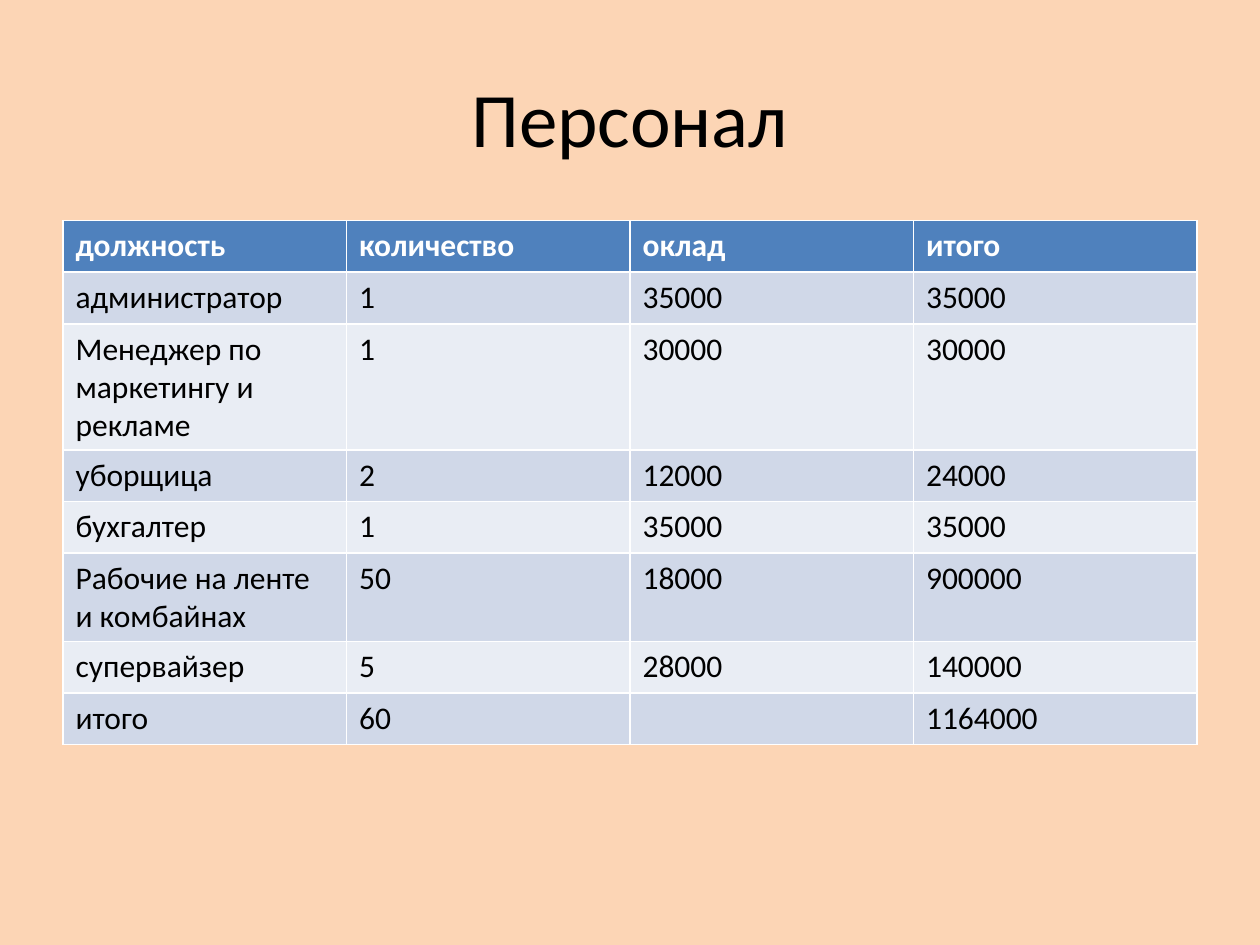
from pptx import Presentation
from pptx import util as u
from pptx.dml import color
from pptx.enum import text

FONT = "Calibri"
WIDTH, HEIGHT = u.Inches(10), u.Inches(7.5)
MARGIN = 0.05  # share of the slide's width
ROW_HEIGHT = u.Inches(0.41)

STAFF = [
    ("должность", "количество", "оклад", "итого"),
    ("администратор", "1", "35000", "35000"),
    ("Менеджер по маркетингу и рекламе", "1", "30000", "30000"),
    ("уборщица", "2", "12000", "24000"),
    ("бухгалтер", "1", "35000", "35000"),
    ("Рабочие на ленте и комбайнах", "50", "18000", "900000"),
    ("супервайзер", "5", "28000", "140000"),
    ("итого", "60", "", "1164000"),
]
HEADER_FILL = "4F81BD"
BAND_FILLS = ("E9EDF4", "D0D8E8")


def paint(fill, shade):
    fill.solid()
    fill.fore_color.rgb = color.RGBColor.from_string(shade)


def write(frame, wording, size, shade, bold=False):
    frame.text = wording
    for span in frame.paragraphs[0].runs:
        span.font.name = FONT
        span.font.size = u.Pt(size)
        span.font.bold = bold
        span.font.color.rgb = color.RGBColor.from_string(shade)


def add_title(page, left, top, width, height, wording):
    box = page.shapes.add_textbox(left, top, width, height)
    frame = box.text_frame
    frame.word_wrap = True
    frame.vertical_anchor = text.MSO_ANCHOR.MIDDLE
    write(frame, wording, 44, "000000")
    frame.paragraphs[0].alignment = text.PP_ALIGN.CENTER


def add_staff_table(page, left, top, width, rows):
    """The default table style supplies the white rules between cells."""
    table = page.shapes.add_table(
        len(rows), len(rows[0]), left, top, width, ROW_HEIGHT * len(rows)
    ).table
    for row_number, row in enumerate(rows):
        header = row_number == 0
        shade = HEADER_FILL if header else BAND_FILLS[row_number % 2]
        for column, wording in enumerate(row):
            cell = table.cell(row_number, column)
            paint(cell.fill, shade)
            write(cell.text_frame, wording, 18,
                  "FFFFFF" if header else "000000", bold=header)


def main():
    deck = Presentation()
    deck.slide_width, deck.slide_height = WIDTH, HEIGHT
    page = deck.slides.add_slide(deck.slide_layouts[6])
    paint(page.background.fill, "FCD5B5")

    left = int(WIDTH * MARGIN)
    width = WIDTH - 2 * left
    add_title(page, left, u.Inches(0.3), width, u.Inches(1.25), "Персонал")
    add_staff_table(page, left, u.Inches(1.75), width, STAFF)
    deck.save("out.pptx")


if __name__ == "__main__":
    main()
